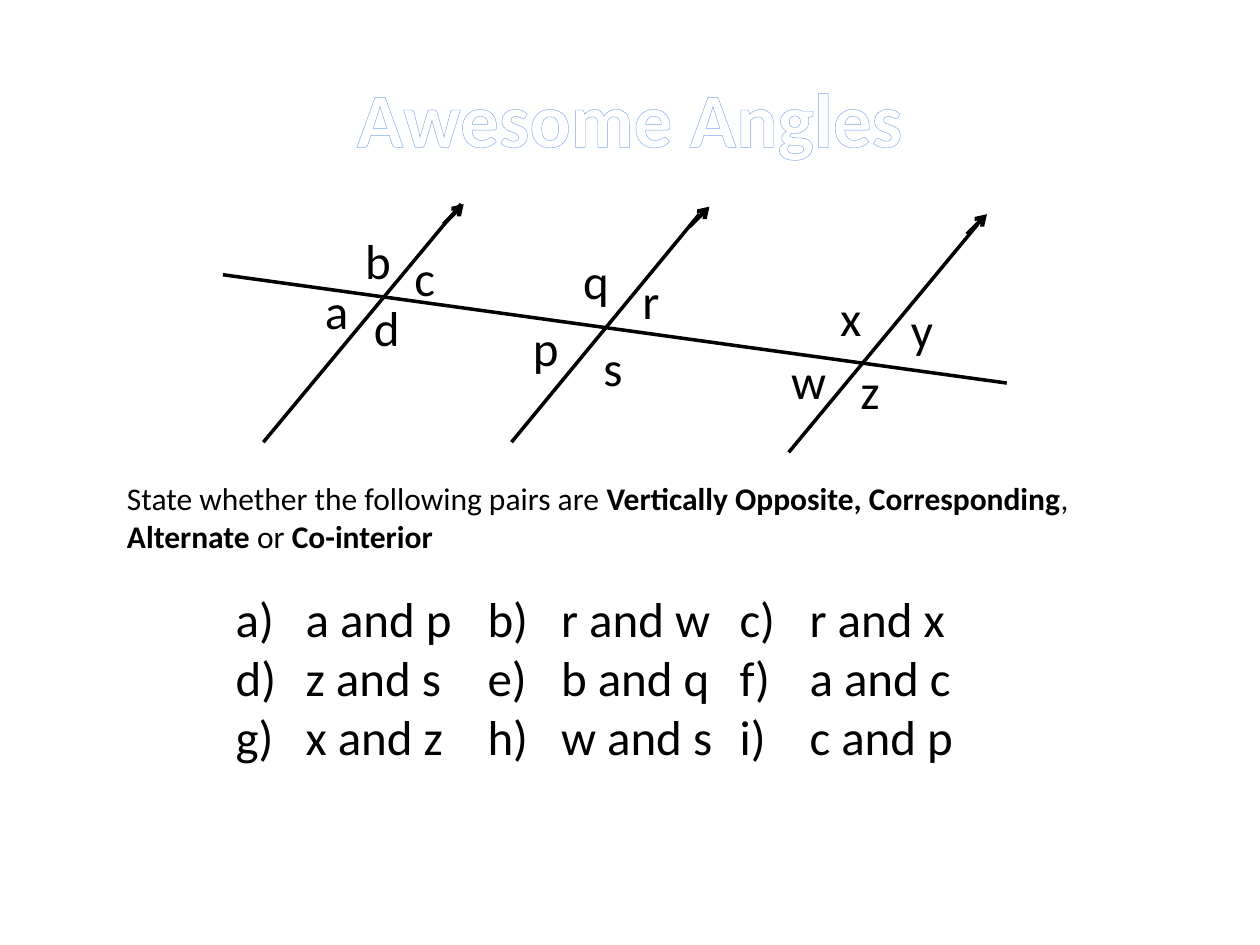
from dataclasses import dataclass

from lxml import etree
from pptx import Presentation
from pptx.dml.color import RGBColor
from pptx.enum import shapes, text
from pptx.oxml import ns
from pptx.util import Pt


@dataclass(frozen=True)
class Theme:
    font: str = "Calibri"
    ink: RGBColor = RGBColor(0, 0, 0)
    title: RGBColor = RGBColor(255, 255, 255)
    outline: str = "7EA6EA"
    outline_width: float = 2.48
    title_size: float = 44
    letter_size: float = 28
    prompt_size: float = 18
    line: float = 2
    arrow: float = 2.25


@dataclass(frozen=True)
class Line:
    x1: float
    y1: float
    x2: float
    y2: float


@dataclass(frozen=True)
class Letter:
    name: str
    x: float
    y: float


THEME = Theme()
HEAD = 11.5
LETTER_BOX = (28, 41)
INDENT = 40
TABS = (144, 186, 288, 328)

TRANSVERSAL = Line(127.4, 157, 575.3, 218.9)
PARALLELS = (
    Line(150.5, 252.7, 263.5, 116.6),
    Line(292.3, 252.7, 399.6, 122.4),
    Line(450.7, 258.5, 558.7, 128.2),
)
TIPS = ((265, 116.6), (405.4, 118.1), (564, 122.4))
LETTERS = (
    Letter("a", 178.6, 157), Letter("b", 201.6, 128.2),
    Letter("d", 206.6, 166.3), Letter("c", 229.7, 138.2),
    Letter("p", 297.4, 177.8), Letter("q", 326.2, 139.7),
    Letter("r", 360, 151.2), Letter("s", 337.7, 189.4),
    Letter("w", 445, 196.6), Letter("x", 473, 160.6),
    Letter("y", 513.4, 167.8), Letter("z", 484.6, 202.3),
)
PROMPT = (
    ("State whether the following pairs are ", False),
    ("Vertically Opposite, Corresponding", True),
    (", ", False),
    ("Alternate", True),
    (" or ", False),
    ("Co-interior", True),
)
QUESTIONS = (
    "a and p\tb)\tr and w\tc)\tr and x",
    "z and s\te)\tb and q\tf)\ta and c",
    "x and z\th)\tw and s\ti)\tc and p",
)


def style(font, size: float, color: RGBColor = THEME.ink, bold: bool = False) -> None:
    font.name, font.size, font.bold = THEME.font, Pt(size), bold
    font.color.rgb = color


def place(sp, x: float, y: float, w: float, h: float) -> None:
    sp.left, sp.top, sp.width, sp.height = Pt(x), Pt(y), Pt(w), Pt(h)


def add_line(s, line: Line, width: float, arrow: bool = False) -> None:
    cxn = s.shapes.add_connector(
        shapes.MSO_CONNECTOR.STRAIGHT,
        Pt(line.x1), Pt(line.y1), Pt(line.x2), Pt(line.y2))
    cxn.line.color.rgb = THEME.ink
    cxn.line.width = Pt(width)
    if arrow:
        etree.SubElement(cxn.line._get_or_add_ln(), ns.qn("a:tailEnd"), type="arrow")
    etree.SubElement(cxn._element.spPr, ns.qn("a:effectLst"))


def add_box(s, x: float, y: float, w: float, h: float):
    tf = s.shapes.add_textbox(Pt(x), Pt(y), Pt(w), Pt(h)).text_frame
    tf.word_wrap = True
    tf.auto_size = text.MSO_AUTO_SIZE.SHAPE_TO_FIT_TEXT
    return tf


def add_letter(s, letter: Letter) -> None:
    tf = add_box(s, letter.x, letter.y, *LETTER_BOX)
    tf.text = letter.name
    style(tf.paragraphs[0].runs[0].font, THEME.letter_size)


def fill_title(s) -> None:
    sp = s.shapes.title
    place(sp, 36, 21.6, 648, 90)
    tf = sp.text_frame
    tf.text = "Awesome Angles"
    tf.vertical_anchor = text.MSO_ANCHOR.MIDDLE
    p = tf.paragraphs[0]
    p.alignment = text.PP_ALIGN.CENTER
    r = p.runs[0]
    style(r.font, THEME.title_size, THEME.title, True)
    ln = etree.Element(ns.qn("a:ln"), w=str(Pt(THEME.outline_width)))
    fill = etree.SubElement(ln, ns.qn("a:solidFill"))
    etree.SubElement(fill, ns.qn("a:srgbClr"), val=THEME.outline)
    r._r.get_or_add_rPr().insert(0, ln)


def add_prompt(s) -> None:
    p = add_box(s, 65.5, 270, 612, 51).paragraphs[0]
    for words, bold in PROMPT:
        r = p.add_run()
        r.text = words
        style(r.font, THEME.prompt_size, bold=bold)


def number_row(p, start: int) -> None:
    p.space_before = Pt(0)
    pPr = p._p.get_or_add_pPr()
    pPr.set("marL", str(Pt(INDENT)))
    pPr.set("indent", str(Pt(-INDENT)))
    etree.SubElement(pPr, ns.qn("a:buFont"), typeface=THEME.font)
    etree.SubElement(pPr, ns.qn("a:buAutoNum"), type="alphaLcParenR", startAt=str(start))
    tabs = etree.SubElement(pPr, ns.qn("a:tabLst"))
    for pos in TABS:
        etree.SubElement(tabs, ns.qn("a:tab"), pos=str(Pt(pos)), algn="l")


def fill_questions(s) -> None:
    sp = s.placeholders[1]
    place(sp, 127.4, 332.6, 459.4, 143.3)
    tf = sp.text_frame
    tf.text = "\n".join(QUESTIONS)
    tf.auto_size = text.MSO_AUTO_SIZE.NONE
    for row, p in enumerate(tf.paragraphs):
        number_row(p, 3 * row + 1)
        for r in p.runs:
            style(r.font, THEME.letter_size)


def main() -> None:
    prs = Presentation()
    prs.slide_width, prs.slide_height = Pt(720), Pt(540)
    s = prs.slides.add_slide(prs.slide_layouts[1])
    fill_title(s)
    for line in (TRANSVERSAL, *PARALLELS):
        add_line(s, line, THEME.line)
    for letter in LETTERS:
        add_letter(s, letter)
    for x, y in TIPS:
        add_line(s, Line(x - HEAD, y + HEAD, x, y), THEME.arrow, arrow=True)
    add_prompt(s)
    fill_questions(s)
    prs.save("out.pptx")


if __name__ == "__main__":
    main()
